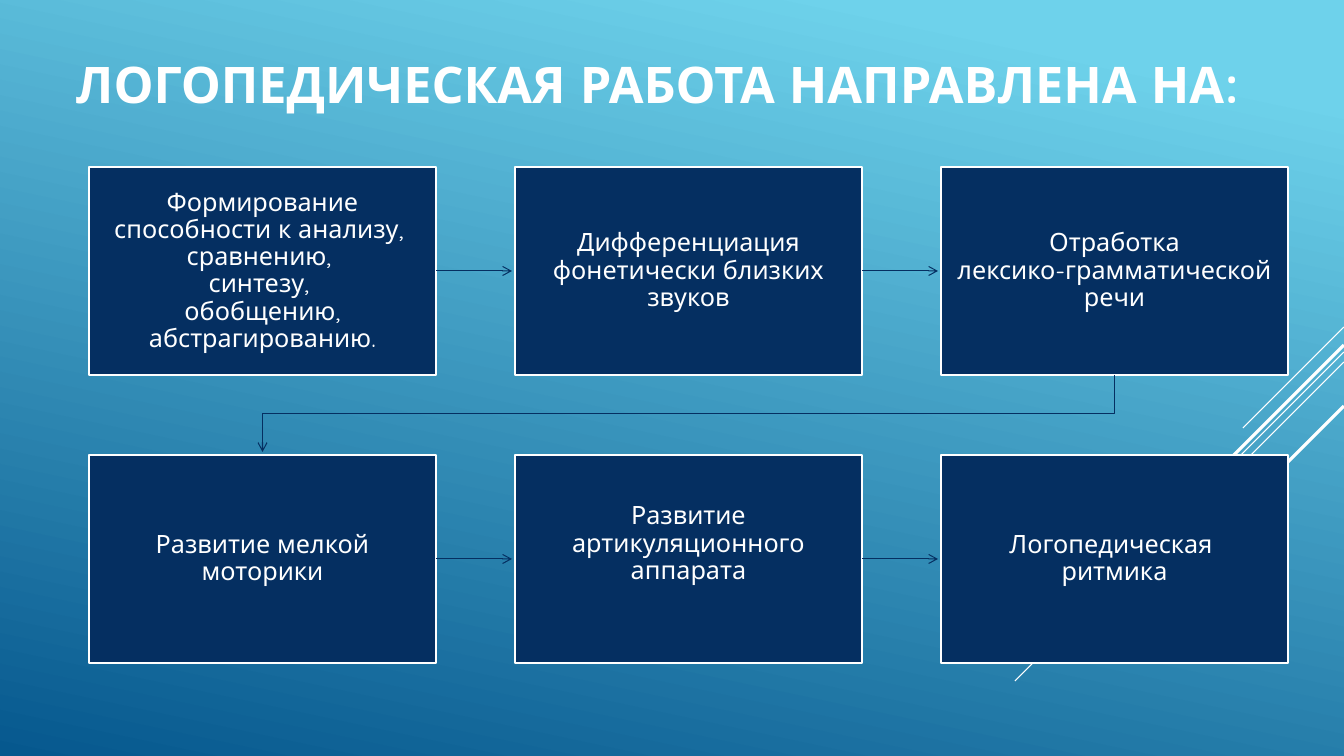
from lxml import etree
from pptx import Presentation
from pptx import util as u
from pptx.dml.color import RGBColor
from pptx.enum import shapes, text
from pptx.oxml.ns import qn

TITLE = "ЛОГОПЕДИЧЕСКАЯ РАБОТА НАПРАВЛЕНА НА:"
STEPS = [
    "Формирование способности к анализу, \vсравнению, \vсинтезу, \vобобщению, абстрагированию.",
    "Дифференциация фонетически близких звуков",
    "Отработка\vлексико-грамматической\vречи",
    "Развитие мелкой моторики",
    "Развитие артикуляционного аппарата",
    "Логопедическая \vритмика",
]
RAISED_STEP = 4
DIAGONALS = [(327, 101, 0.75), (352, 329, 0.75), (362, 209, 0.75), (345, 193, 2.25), (406, 140, 2.25)]

FONT = "Quicksand"
WHITE = RGBColor(0xFF, 0xFF, 0xFF)
NAVY = RGBColor(0x05, 0x2F, 0x61)
SKY = RGBColor(0x6E, 0xD2, 0xEB)
DEEP = RGBColor(0x06, 0x58, 0x8E)

PAGE_W, PAGE_H = 1344, 756
COLUMNS = 3
LEFT, TOP = 89, 167
BOX_W, BOX_H = 347, 208
PITCH_X, PITCH_Y = 426, 288
INSET, RAISE = 14, 30
ARROW_GAP = 3


def px(length):
    return u.Emu(round(length * 914400 / 100.8))


def write(frame, content, size, bold=False, align=text.PP_ALIGN.LEFT, spacing=1.0, inset=10, raised=0):
    frame.word_wrap = True
    frame.vertical_anchor = text.MSO_ANCHOR.MIDDLE
    frame.margin_left = frame.margin_right = frame.margin_top = px(inset)
    frame.margin_bottom = px(inset + raised)
    para = frame.paragraphs[0]
    para.text = content
    para.alignment = align
    para.line_spacing = spacing
    for span in para.runs:
        span.font.name = FONT
        span.font.size = u.Pt(size)
        span.font.bold = bold
        span.font.color.rgb = WHITE


def style_line(shape, color, width, arrow=False):
    shape.line.color.rgb = color
    shape.line.width = u.Pt(width)
    properties = shape.element.spPr
    if arrow:
        etree.SubElement(properties.find(qn("a:ln")), qn("a:tailEnd"), type="arrow")
    if properties.find(qn("a:effectLst")) is None:
        etree.SubElement(properties, qn("a:effectLst"))


def add_line(page, start, end, color, width, arrow=False):
    line = page.shapes.add_connector(shapes.MSO_CONNECTOR.STRAIGHT, *map(px, start + end))
    style_line(line, color, width, arrow)


def add_bent_arrow(page, points):
    corners = [(px(x), px(y)) for x, y in points]
    builder = page.shapes.build_freeform(*corners[0])
    builder.add_line_segments(corners[1:], close=False)
    arrow = builder.convert_to_shape()
    arrow.fill.background()
    arrow.shadow.inherit = False
    style_line(arrow, NAVY, 0.75, arrow=True)


def add_step(page, index, content):
    row, column = divmod(index, COLUMNS)
    left, top = LEFT + column * PITCH_X, TOP + row * PITCH_Y
    middle, center = top + BOX_H / 2, left + BOX_W / 2
    box = page.shapes.add_shape(shapes.MSO_SHAPE.RECTANGLE, px(left), px(top), px(BOX_W), px(BOX_H))
    box.shadow.inherit = False
    box.fill.solid()
    box.fill.fore_color.rgb = NAVY
    style_line(box, WHITE, 1.25)
    write(box.text_frame, content, 18, align=text.PP_ALIGN.CENTER, spacing=0.9,
          inset=INSET, raised=RAISE if index == RAISED_STEP else 0)
    if column < COLUMNS - 1:
        add_line(page, (left + BOX_W, middle), (left + PITCH_X - ARROW_GAP, middle), NAVY, 0.75, arrow=True)
    elif index < len(STEPS) - 1:
        next_top = top + PITCH_Y
        bend = (top + BOX_H + next_top - ARROW_GAP) / 2
        first_center = LEFT + BOX_W / 2
        add_bent_arrow(page, [(center, top + BOX_H), (center, bend),
                              (first_center, bend), (first_center, next_top - ARROW_GAP)])


def main():
    deck = Presentation()
    deck.slide_width, deck.slide_height = px(PAGE_W), px(PAGE_H)
    page = deck.slides.add_slide(deck.slide_layouts[5])

    fill = page.background.fill
    fill.gradient()
    fill.gradient_angle = 258
    for stop, color, position in zip(fill.gradient_stops, (SKY, DEEP), (0.1, 1.0)):
        stop.color.rgb = color
        stop.position = position

    title = page.shapes.title
    title.left, title.top, title.width, title.height = px(66), px(0), px(1223), px(166)
    write(title.text_frame, TITLE, 36, bold=True)

    for top, run, width in DIAGONALS:
        add_line(page, (PAGE_W, top), (PAGE_W - run, top + run), WHITE, width)
    for index, content in enumerate(STEPS):
        add_step(page, index, content)
    deck.save("out.pptx")


if __name__ == "__main__":
    main()
